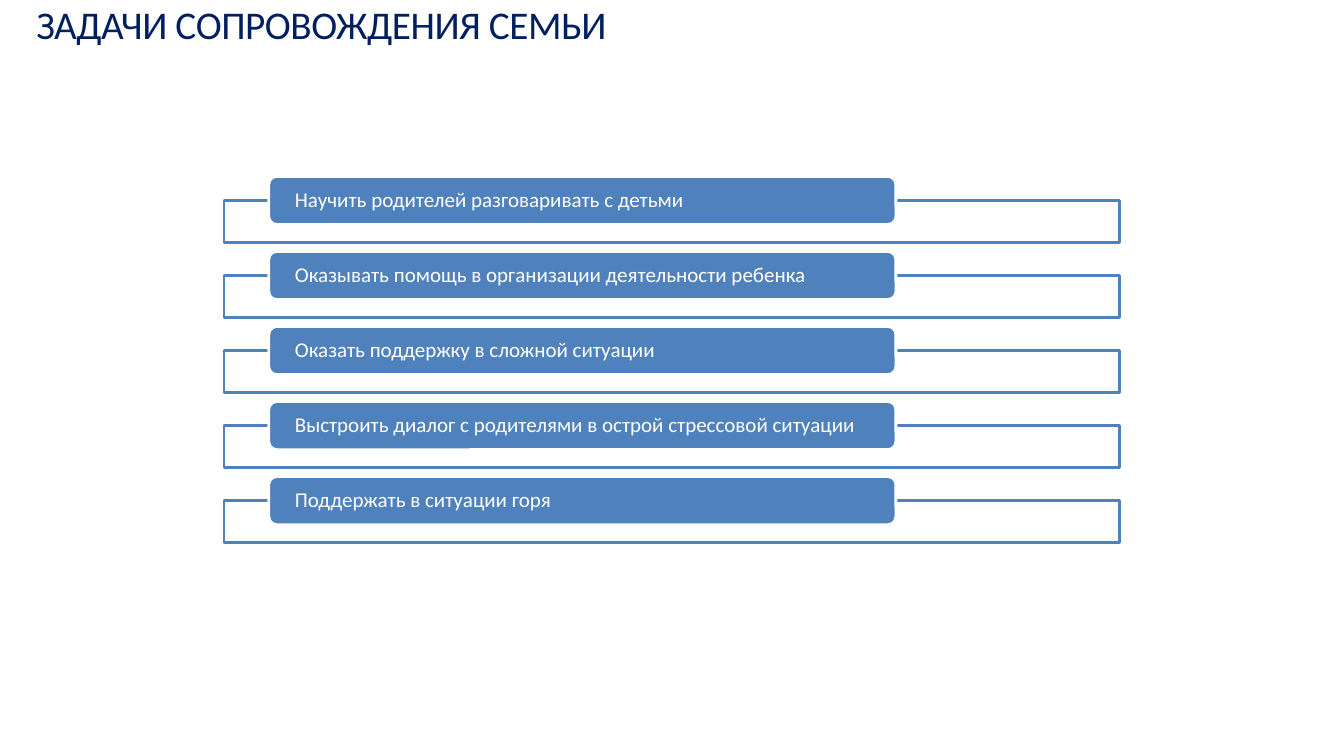
from lxml.etree import SubElement
from pptx import Presentation
from pptx.dml.color import RGBColor
from pptx.enum.shapes import MSO_SHAPE
from pptx.enum.text import MSO_ANCHOR, MSO_AUTO_SIZE, PP_ALIGN
from pptx.oxml.ns import qn
from pptx.util import Pt

NAVY = RGBColor(0x00, 0x1F, 0x5F)
BLUE = RGBColor(0x4F, 0x81, 0xBD)
WHITE = RGBColor(0xFF, 0xFF, 0xFF)

TASKS = [
    "Научить родителей разговаривать с детьми",
    "Оказывать помощь в организации деятельности ребенка",
    "Оказать поддержку в сложной ситуации",
    "Выстроить диалог с родителями в острой стрессовой ситуации",
    "Поддержать в ситуации горя",
]
FIRST_TOP = 126
ROW_STEP = 53.6


def write(box, text, *, size, color, font="Calibri", inset=0,
          anchor=MSO_ANCHOR.TOP, line_spacing=1.0, tracking=None):
    """Put one left-aligned paragraph into a shape."""
    frame = box.text_frame
    frame.word_wrap = True
    frame.vertical_anchor = anchor
    frame.margin_left = frame.margin_right = Pt(inset)
    frame.margin_top = frame.margin_bottom = 0
    para = frame.paragraphs[0]
    para.alignment = PP_ALIGN.LEFT
    para.line_spacing = line_spacing
    span = para.add_run()
    span.text = text
    span.font.name = font
    span.font.size = Pt(size)
    span.font.color.rgb = color
    if tracking is not None:
        span.font._element.set("spc", str(round(tracking * 100)))


class TaskPage:
    """Hold the style and the current slide."""

    def __init__(self, deck):
        """Add a title-only slide to the deck."""
        self.line_width = Pt(2)
        self.page = deck.slides.add_slide(deck.slide_layouts[5])

    def title(self, text):
        """Place and fill the title."""
        box = self.page.shapes.title
        box.left, box.top, box.width, box.height = Pt(26), 0, Pt(908), Pt(34)
        write(box, text, size=28, color=NAVY, tracking=-0.3)
        box.text_frame.auto_size = MSO_AUTO_SIZE.SHAPE_TO_FIT_TEXT

    def panel(self, kind, left, top, width, height, fill, line):
        """Draw a filled and outlined shape."""
        box = self.page.shapes.add_shape(
            kind, Pt(left), Pt(top), Pt(width), Pt(height))
        box.shadow.inherit = False
        box.fill.solid()
        box.fill.fore_color.rgb = fill
        box.line.color.rgb = line
        box.line.width = self.line_width
        return box

    def task(self, text, top):
        """Draw a task label over its outlined frame."""
        frame = self.panel(MSO_SHAPE.RECTANGLE, 160, top + 17.4, 640, 29.6,
                           WHITE, BLUE)
        tint = frame._element.spPr.find(qn("a:solidFill"))[0]
        SubElement(tint, qn("a:alpha"), val="90000")
        label = self.panel(MSO_SHAPE.ROUNDED_RECTANGLE, 192, top, 448, 34.4,
                           BLUE, WHITE)
        write(label, text, size=15, color=WHITE, inset=17,
              anchor=MSO_ANCHOR.MIDDLE, line_spacing=0.9)


def main():
    """Build and save the deck."""
    deck = Presentation()
    deck.slide_width, deck.slide_height = Pt(960), Pt(540)
    page = TaskPage(deck)
    page.title("ЗАДАЧИ СОПРОВОЖДЕНИЯ СЕМЬИ")
    for row, text in enumerate(TASKS):
        page.task(text, FIRST_TOP + row * ROW_STEP)
    deck.save("out.pptx")


if __name__ == "__main__":
    main()
